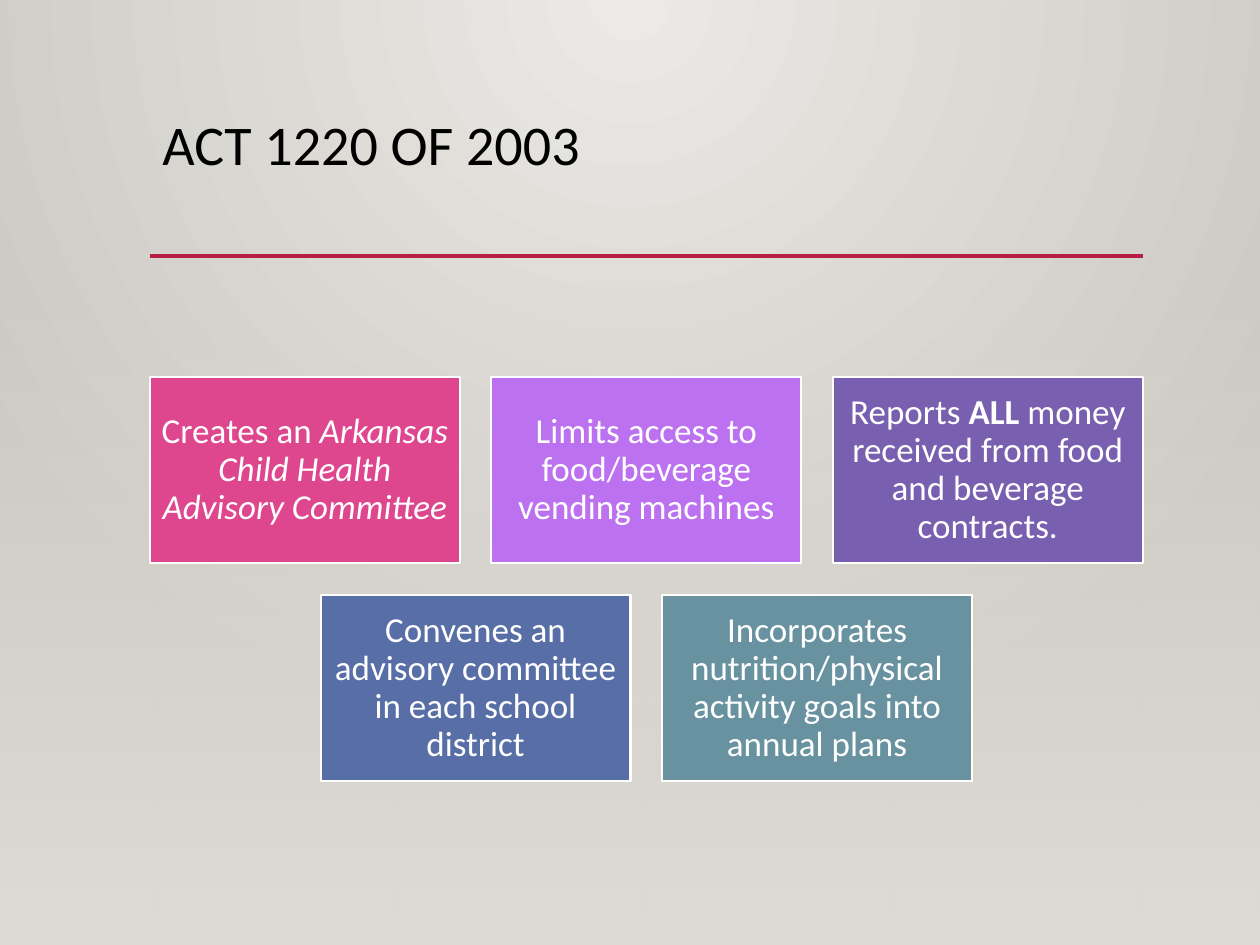
from lxml import etree
from pptx import Presentation
from pptx import util as u
from pptx.dml.color import RGBColor
from pptx.enum import shapes, text
from pptx.oxml.ns import qn

BLACK = RGBColor(0x00, 0x00, 0x00)
WHITE = RGBColor(0xFF, 0xFF, 0xFF)
CRIMSON = RGBColor(0xB7, 0x1E, 0x42)
PINK = RGBColor(0xDE, 0x47, 0x8E)
VIOLET = RGBColor(0xBC, 0x72, 0xF0)
PURPLE = RGBColor(0x79, 0x5F, 0xAF)
BLUE = RGBColor(0x58, 0x6E, 0xA6)
TEAL = RGBColor(0x68, 0x92, 0xA0)
LIGHT = RGBColor(0xEC, 0xEA, 0xE7)
GREY = RGBColor(0xCA, 0xC7, 0xC1)
SAND = RGBColor(0xDF, 0xDB, 0xD5)

WIDTH, HEIGHT = 10, 7.5
LEFT, TOP = 1.19, 2.99          # origin of the card grid
CARD_W, CARD_H, GAP = 2.46, 1.48, 0.25
CONTENT_W = 3 * CARD_W + 2 * GAP


class Deck:
    font = "Calibri"

    def __init__(self, prs):
        self.s = prs.slides.add_slide(prs.slide_layouts[6])

    def gradient(self, fill, owner, stops, radial=False):
        """Fill with (position, colour, alpha) stops, downwards or from the top centre."""
        fill.gradient()
        grad = owner.find(".//" + qn("a:gradFill"))
        for child in list(grad):
            grad.remove(child)
        gs_lst = etree.SubElement(grad, qn("a:gsLst"))
        for pos, color, alpha in stops:
            gs = etree.SubElement(gs_lst, qn("a:gs"), pos=str(pos * 1000))
            clr = etree.SubElement(gs, qn("a:srgbClr"), val=str(color))
            if alpha < 100:
                etree.SubElement(clr, qn("a:alpha"), val=str(alpha * 1000))
        if radial:
            way = etree.SubElement(grad, qn("a:path"), {"path": "circle"})
            etree.SubElement(way, qn("a:fillToRect"),
                             l="43000", t="0", r="43000", b="100000")
        else:
            etree.SubElement(grad, qn("a:lin"), ang="5400000", scaled="0")

    def rect(self, x, y, w, h):
        sp = self.s.shapes.add_shape(shapes.MSO_SHAPE.RECTANGLE, u.Inches(x),
                                     u.Inches(y), u.Inches(w), u.Inches(h))
        sp.shadow.inherit = False
        return sp

    def panel(self, top, stops, radial=False):
        """Full-width gradient from the given height to the foot of the slide."""
        sp = self.rect(0, top, WIDTH, HEIGHT - top)
        sp.line.fill.background()
        self.gradient(sp.fill, sp.element, stops, radial)

    def rule(self, y):
        ln = self.s.shapes.add_connector(shapes.MSO_CONNECTOR.STRAIGHT, u.Inches(LEFT), u.Inches(y),
                                         u.Inches(LEFT + CONTENT_W), u.Inches(y))
        ln.line.color.rgb = CRIMSON
        ln.line.width = u.Pt(2.5)
        etree.SubElement(ln.element.spPr, qn("a:effectLst"))

    def add_runs(self, tf, runs, size, color, align):
        tf.word_wrap = True
        p = tf.paragraphs[0]
        p.alignment = align
        p.line_spacing = 0.9
        for words, style in runs:
            r = p.add_run()
            r.text = words
            r.font.name = self.font
            r.font.size = u.Pt(size)
            r.font.color.rgb = color
            if style == "italic":
                r.font.italic = True
            elif style == "bold":
                r.font.bold = True

    def title(self, words):
        sp = self.s.shapes.add_textbox(u.Inches(LEFT), u.Inches(0.88),
                                       u.Inches(CONTENT_W), u.Inches(1.15))
        self.add_runs(sp.text_frame, [(words, None)], 32, BLACK, text.PP_ALIGN.LEFT)

    def card(self, col, row, color, runs):
        sp = self.rect(LEFT + col * (CARD_W + GAP), TOP + row * (CARD_H + GAP),
                       CARD_W, CARD_H)
        sp.fill.solid()
        sp.fill.fore_color.rgb = color
        sp.line.color.rgb = WHITE
        sp.line.width = u.Pt(1.25)
        tf = sp.text_frame
        tf.margin_left = tf.margin_right = tf.margin_top = tf.margin_bottom = u.Inches(0.08)
        tf.vertical_anchor = text.MSO_ANCHOR.MIDDLE
        self.add_runs(tf, runs, 20, WHITE, text.PP_ALIGN.CENTER)


# Rows of cards; each row is centred on the three-column grid
ROWS = [
    [(PINK, [("Creates an ", None),
             ("Arkansas Child Health Advisory Committee", "italic")]),
     (VIOLET, [("Limits access to food/beverage vending machines", None)]),
     (PURPLE, [("Reports ", None), ("ALL", "bold"),
               (" money received from food and beverage contracts.", None)])],
    [(BLUE, [("Convenes an advisory committee in each school district", None)]),
     (TEAL, [("Incorporates nutrition/physical activity goals into annual plans", None)])],
]


def main():
    prs = Presentation()
    prs.slide_width, prs.slide_height = u.Inches(WIDTH), u.Inches(HEIGHT)
    deck = Deck(prs)

    # Backdrop: glow from the top, fading to sand at the foot
    glow = [(0, LIGHT, 100), (100, GREY, 100)]
    deck.gradient(deck.s.background.fill, deck.s.element, glow, radial=True)
    deck.panel(0, glow, radial=True)

    # Heading
    deck.title("ACT 1220 OF 2003")
    deck.rule(2.03)
    deck.panel(2.21, [(0, SAND, 0), (100, SAND, 100)])

    # Cards
    for row, cards in enumerate(ROWS):
        indent = (3 - len(cards)) / 2
        for col, (color, runs) in enumerate(cards):
            deck.card(indent + col, row, color, runs)

    prs.save("out.pptx")


if __name__ == "__main__":
    main()
